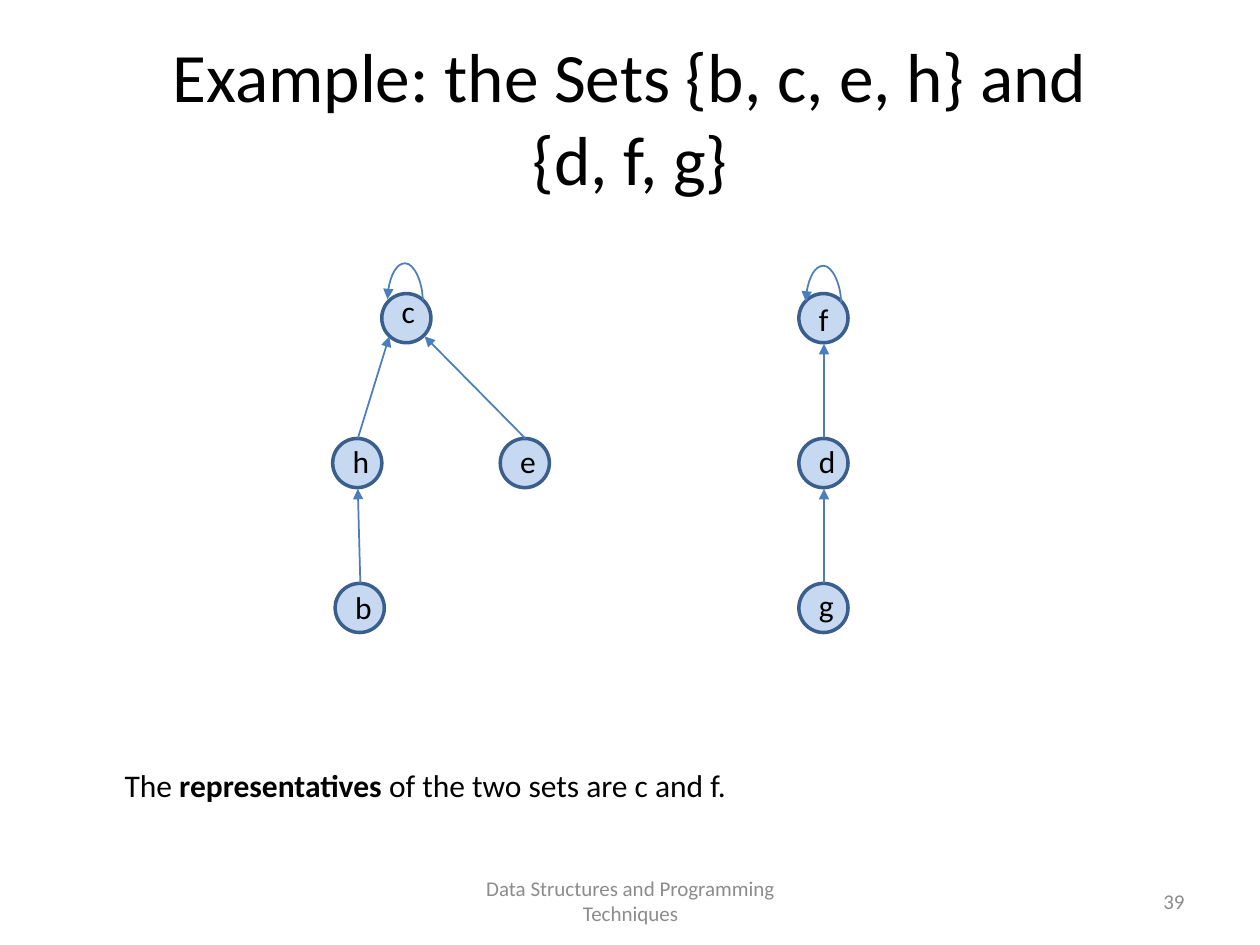
from lxml import etree
from pptx import Presentation, util as u
from pptx.dml.color import RGBColor
from pptx.enum import shapes, text
from pptx.oxml.ns import qn

PX = 9144  # 100 px to the inch
DISC, ROW = 39, 115  # node diameter, distance between levels
INK, GREY, FILL, RIM, EDGE = "000000", "8C8C8C", "C6D9F1", "3A5F8C", "4B7EBC"
LEFT, MID, RIGHT = text.PP_ALIGN.LEFT, text.PP_ALIGN.CENTER, text.PP_ALIGN.RIGHT
SITES = {"left": (6, 34), "mid": (20, 40), "right": (34, 34)}  # arrow ends


def px(*vals):
    return [u.Emu(round(v * PX)) for v in vals]


def color(code):
    return RGBColor.from_string(code)


def write(frame, runs, size, align, ink=INK):
    """Fill the first paragraph; each run is (words, bold)."""
    frame.word_wrap = True
    para = frame.paragraphs[0]
    para.alignment = align
    for words, bold in runs:
        run = para.add_run()
        run.text = words
        run.font.name, run.font.size, run.font.bold = "Calibri", u.Pt(size), bold
        run.font.color.rgb = color(ink)
    return para


def label(slide, box, runs, size, align, ink=INK, anchor=text.MSO_ANCHOR.TOP):
    frame = slide.shapes.add_textbox(*px(*box)).text_frame
    frame.vertical_anchor = anchor
    write(frame, runs, size, align, ink)


def head(slide, box):
    title = slide.shapes.title
    title.left, title.top, title.width, title.height = px(*box)
    frame = title.text_frame
    frame.auto_size = text.MSO_AUTO_SIZE.NONE
    frame.vertical_anchor = text.MSO_ANCHOR.MIDDLE
    para = write(frame, [("Example: the Sets {b, c, e, h} and", False)], 39.6, MID)
    para.add_line_break()
    write(frame, [("{d, f, g}", False)], 39.6, MID)


def arrow(slide, kind, ends):
    link = slide.shapes.add_connector(kind, *px(*ends))
    link.line.color.rgb = color(EDGE)
    link.line.width = u.Pt(1)
    line = link.line._get_or_add_ln()
    etree.SubElement(line, qn("a:tailEnd"), type="triangle")
    etree.SubElement(link._element.spPr, qn("a:effectLst"))
    return link


def loop(slide, x, y):
    """Curved arrow from the root to itself, centred on x, y."""
    link = arrow(slide, shapes.MSO_CONNECTOR.CURVE, (x, y + 14, x + 1, y - 14))
    shape = link._element.spPr
    shape.find(qn("a:xfrm")).set("rot", str(270 * 60000))
    geom = shape.find(qn("a:prstGeom"))
    guides = geom.find(qn("a:avLst"))
    if guides is None:
        guides = etree.SubElement(geom, qn("a:avLst"))
    etree.SubElement(guides, qn("a:gd"), name="adj1", fmla="val 3000000")


def node(slide, x, y):
    disc = slide.shapes.add_shape(shapes.MSO_SHAPE.OVAL, *px(x, y, DISC, DISC))
    disc.shadow.inherit = False
    disc.fill.solid()
    disc.fill.fore_color.rgb = color(FILL)
    disc.line.color.rgb = color(RIM)
    disc.line.width = u.Pt(2)


def tree(slide, left, top, nodes, edges, turn):
    """nodes: name -> (x, level, label shift); edges: child, parent, site."""
    spots = {n: (left + x, top + row * ROW) for n, (x, row, _) in nodes.items()}
    for x, y in spots.values():
        node(slide, x, y)
    for child, parent, site in edges:
        (cx, cy), (px0, py0), (dx, dy) = spots[child], spots[parent], SITES[site]
        arrow(slide, shapes.MSO_CONNECTOR.STRAIGHT,
              (cx + 20, cy, px0 + dx, py0 + dy))
    loop(slide, left + turn[0], top + turn[1])
    for name, (x, y) in spots.items():
        shift = nodes[name][2]
        label(slide, (x + 6, y + shift, 27, 40), [(name, False)], 18, MID)


def foot(slide, top):
    mid = text.MSO_ANCHOR.MIDDLE
    label(slide, (342, top, 317, 40),
          [("Data Structures and Programming Techniques", False)],
          12, MID, GREY, mid)
    label(slide, (717, top, 233, 40), [("39", False)], 12, RIGHT, GREY, mid)


def main():
    deck = Presentation()
    deck.slide_width, deck.slide_height = px(1000, 750)
    slide = deck.slides.add_slide(deck.slide_layouts[5])
    head(slide, (50, 30, 900, 125))
    # Set {b, c, e, h}
    tree(slide, 264, 233,
         {"c": (39, 0, -6), "h": (0, 1, -2), "e": (133, 1, -2), "b": (2, 2, -1)},
         [("b", "h", "mid"), ("h", "c", "left"), ("e", "c", "right")], (57, 5))
    # Set {d, f, g}
    tree(slide, 634, 233,
         {"f": (0, 0, 0), "d": (0, 1, -2), "g": (0, 2, -3)},
         [("d", "f", "mid"), ("g", "d", "mid")], (19, 7))
    # Note and footer
    label(slide, (89, 603, 726, 40),
          [("The ", False), ("representatives", True),
           (" of the two sets are c and f.", False)], 18, LEFT)
    foot(slide, 695)
    deck.save("out.pptx")


if __name__ == "__main__":
    main()
